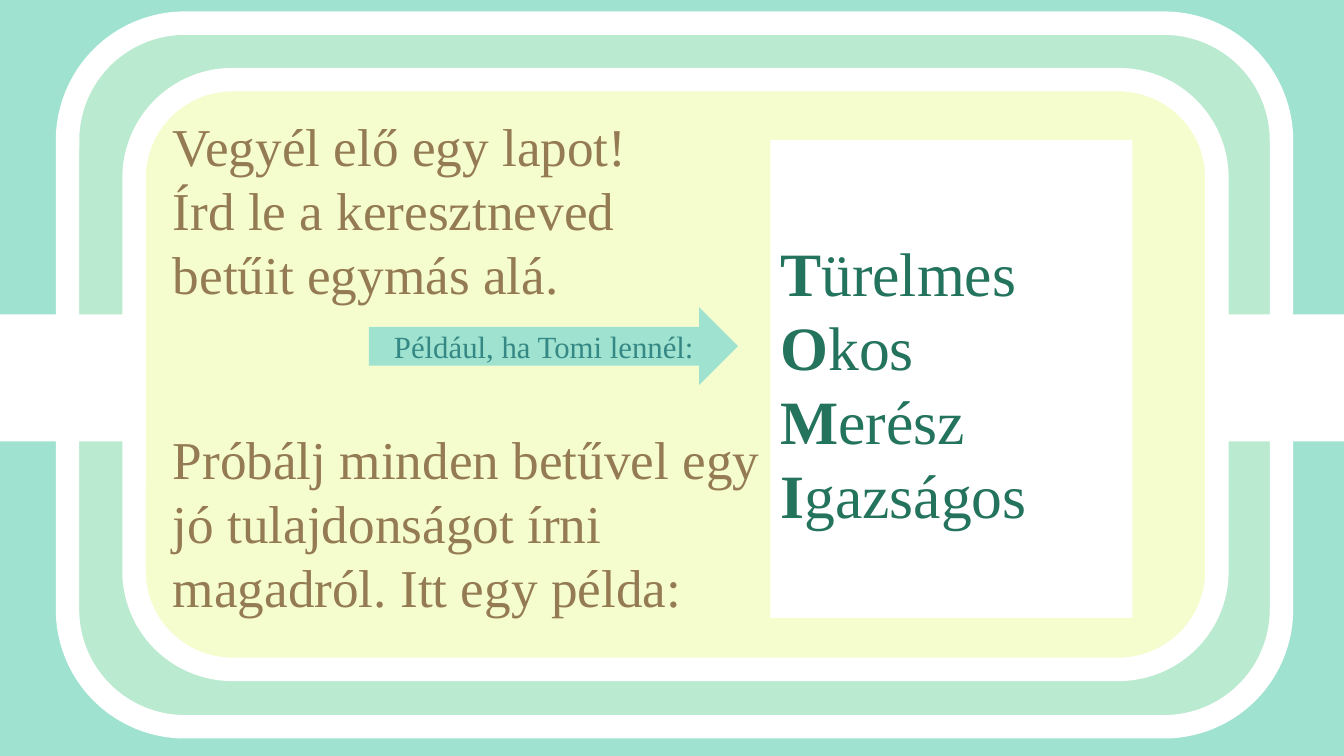
from lxml.etree import SubElement
from pptx import Presentation
from pptx.dml.color import RGBColor
from pptx.enum.shapes import MSO_SHAPE as Preset
from pptx.enum.text import MSO_ANCHOR as Anchor, PP_ALIGN as Align
from pptx.oxml.ns import qn
from pptx.util import Inches, Pt

WIDTH, HEIGHT = 13.33, 7.5
FONT = "Times New Roman"
MINT, CREAM, WHITE = "9EE2CF", "F5FDCF", "FFFFFF"
BROWN, GREEN, TEAL = "947B54", "23735D", "368885"
FRAME_LINE = 16.75

TASK = ["Vegyél elő egy lapot!", "Írd le a keresztneved", "betűit egymás alá."]
HINT = ["Próbálj minden betűvel egy", "jó tulajdonságot írni", "magadról. Itt egy példa:"]
VIRTUES = ["Türelmes", "Okos", "Merész", "Igazságos"]


def paint(color_format, color):
    color_format.rgb = RGBColor.from_string(color)


def add_block(slide, preset, left, top, width, height, fill, outline=None, opacity=None):
    block = slide.shapes.add_shape(
        preset, Inches(left), Inches(top), Inches(width), Inches(height))
    block.shadow.inherit = False
    block.fill.solid()
    paint(block.fill.fore_color, fill)
    if opacity:
        tint = block.fill._xPr.find(qn("a:solidFill"))[0]
        SubElement(tint, qn("a:alpha"), val=str(opacity * 1000))
    if outline:
        block.line.width = Pt(FRAME_LINE)
        paint(block.line.color, outline)
    else:
        block.line.fill.background()
    return block


def write(block, lines, size, color, align=Align.LEFT, anchor=Anchor.TOP,
          inset_top=0.05, bold_initial=False, gaps=None):
    frame = block.text_frame
    frame.word_wrap = True
    frame.vertical_anchor = anchor
    frame.margin_top = Inches(inset_top)
    for index, line in enumerate(lines):
        paragraph = frame.paragraphs[0] if index == 0 else frame.add_paragraph()
        paragraph.alignment = align
        if gaps and index in gaps:
            paragraph.space_before = Pt(gaps[index])
        parts = [(line[0], True), (line[1:], False)] if bold_initial else [(line, False)]
        for text, bold in parts:
            run = paragraph.add_run()
            run.text = text
            run.font.name = FONT
            run.font.size = Pt(size)
            run.font.bold = bold
            paint(run.font.color, color)


def main():
    deck = Presentation()
    deck.slide_width, deck.slide_height = Inches(WIDTH), Inches(HEIGHT)
    slide = deck.slides.add_slide(deck.slide_layouts[6])
    slide.background.fill.solid()
    paint(slide.background.fill.fore_color, MINT)

    add_block(slide, Preset.ROUNDED_RECTANGLE, 0.67, 0.23, 12.04, 6.98, CREAM,
              outline=WHITE, opacity=33)
    add_block(slide, Preset.RECTANGLE, 0, 3.12, WIDTH, 1.26, WHITE)
    instructions = add_block(slide, Preset.ROUNDED_RECTANGLE, 1.33, 0.79, 10.74, 5.85,
                             CREAM, outline=WHITE)
    write(instructions, TASK + HINT, 38, BROWN, gaps={len(TASK): 87})

    example = add_block(slide, Preset.RECTANGLE, 7.64, 1.39, 3.59, 4.74, WHITE)
    write(example, VIRTUES, 44, GREEN, align=Align.JUSTIFY,
          inset_top=0.94, bold_initial=True)

    pointer = add_block(slide, Preset.RIGHT_ARROW, 3.66, 3.05, 3.66, 0.77, MINT)
    write(pointer, ["Például, ha Tomi lennél:"], 22, TEAL,
          align=Align.CENTER, anchor=Anchor.MIDDLE)

    deck.save("out.pptx")


if __name__ == "__main__":
    main()
